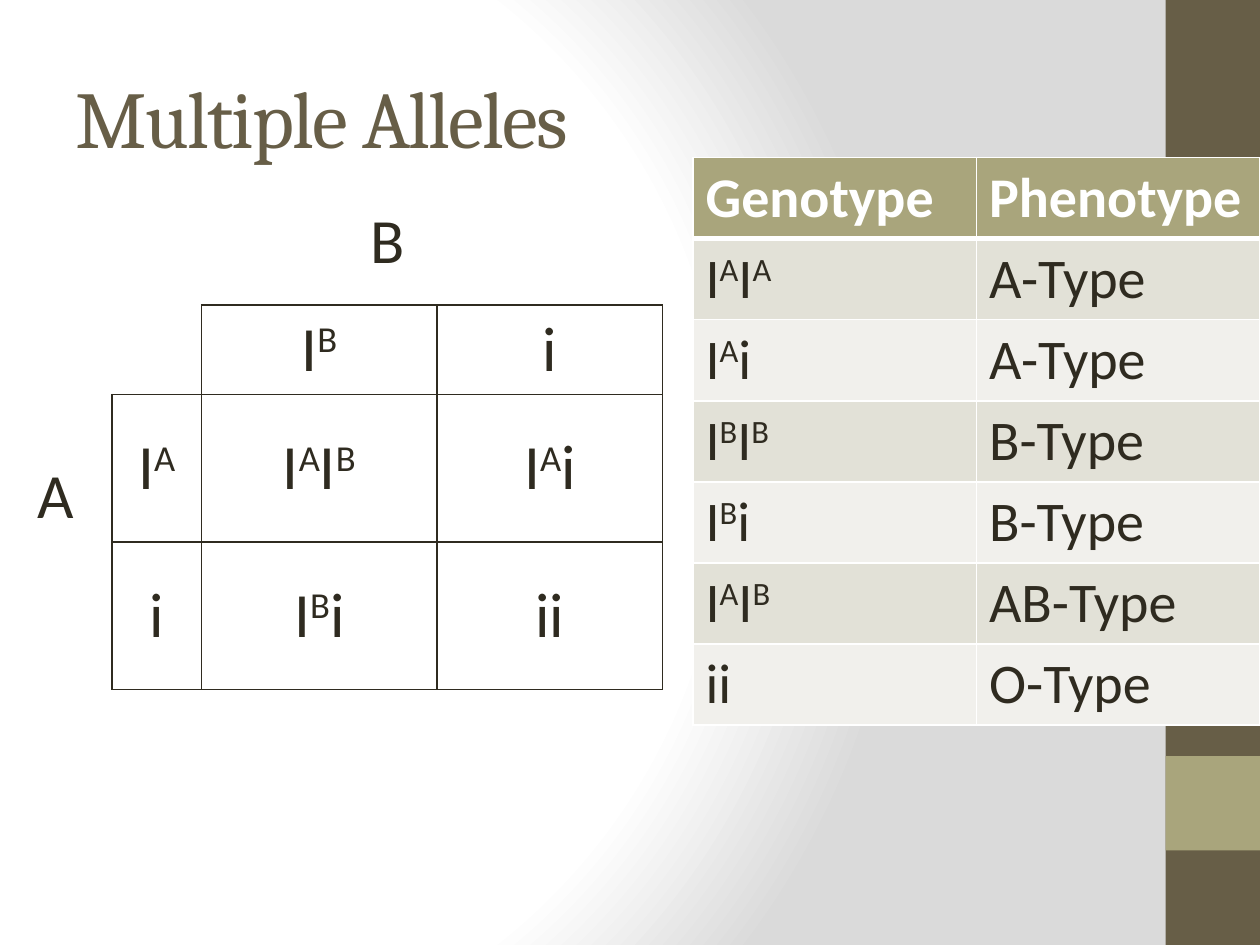
from pptx import Presentation
from pptx.dml.color import RGBColor
from pptx.enum.shapes import MSO_SHAPE
from pptx.enum.text import MSO_ANCHOR, PP_ALIGN
from pptx.oxml import parse_xml
from pptx.oxml.ns import nsdecls, qn
from pptx.util import Inches, Pt

BROWN = RGBColor(0x67, 0x5E, 0x47)
OLIVE = RGBColor(0xA9, 0xA5, 0x7C)
INK = RGBColor(0x2F, 0x2B, 0x20)
WHITE = RGBColor(0xFF, 0xFF, 0xFF)
GREY = RGBColor(0xDA, 0xDA, 0xDA)
BANDS = (RGBColor(0xE2, 0xE1, 0xD7), RGBColor(0xF1, 0xF0, 0xEC))
PLAIN_TABLE_STYLE = "{2D5ABB26-0587-4C30-8999-92F81FD0307C}"

# A caret raises the letter that follows it
CROSS = [
    ["", "B", "", ""],
    ["A", "", "I^B", "i"],
    ["", "I^A", "I^AI^B", "I^Ai"],
    ["", "i", "I^Bi", "ii"],
]
BLOOD_TYPES = [
    ("Genotype", "Phenotype"),
    ("I^AI^A", "A-Type"),
    ("I^Ai", "A-Type"),
    ("I^BI^B", "B-Type"),
    ("I^Bi", "B-Type"),
    ("I^AI^B", "AB-Type"),
    ("ii", "O-Type"),
]


def set_background(slide):
    stops = "".join(
        f'<a:gs pos="{pos * 1000}"><a:srgbClr val="{color}"/></a:gs>'
        for pos, color in ((0, WHITE), (75, WHITE), (100, GREY))
    )
    slide.element.cSld.insert(0, parse_xml(
        f'<p:bg {nsdecls("p", "a")}><p:bgPr><a:gradFill rotWithShape="1">'
        f'<a:gsLst>{stops}</a:gsLst><a:path path="circle">'
        '<a:fillToRect l="20000" t="50000" r="100000" b="50000"/></a:path>'
        '</a:gradFill><a:effectLst/></p:bgPr></p:bg>'))


def add_band(slide, top, height, color):
    band = slide.shapes.add_shape(
        MSO_SHAPE.RECTANGLE, Inches(9.25), Inches(top), Inches(0.75), Inches(height))
    band.shadow.inherit = False
    band.fill.solid()
    band.fill.fore_color.rgb = color
    band.line.fill.background()


def set_title(slide, text):
    title = slide.shapes.title
    place = {"left": 0.5, "top": 0.3, "width": 8.33, "height": 1.25}
    for name, value in place.items():
        setattr(title, name, Inches(value))
    title.text_frame.vertical_anchor = MSO_ANCHOR.MIDDLE
    paragraph = title.text_frame.paragraphs[0]
    paragraph.alignment = PP_ALIGN.LEFT
    run = paragraph.add_run()
    run.text = text
    format_font(run.font, BROWN, 46, name="Cambria")
    run.font._element.set("spc", "-100")


def format_font(font, color, size, name="Calibri", bold=False):
    for attribute, value in {"size": Pt(size), "name": name, "bold": bold}.items():
        setattr(font, attribute, value)
    font.color.rgb = color


def add_plain_table(slide, left, top, columns, rows):
    frame = slide.shapes.add_table(
        len(rows), len(columns), Inches(left), Inches(top),
        Inches(sum(columns)), Inches(sum(rows)))
    table = frame.table
    table._tbl.tblPr.find(qn("a:tableStyleId")).text = PLAIN_TABLE_STYLE
    for column, width in zip(table.columns, columns):
        column.width = Inches(width)
    for row, height in zip(table.rows, rows):
        row.height = Inches(height)
    return table


def write_allele(cell, text, color, size, align, bold=False):
    paragraph = cell.text_frame.paragraphs[0]
    paragraph.alignment = align
    base, *raised = text.split("^")
    pieces = [(base, False)]
    for part in raised:
        pieces += [(part[0], True), (part[1:], False)]
    for piece, is_raised in pieces:
        if piece:
            run = paragraph.add_run()
            run.text = piece
            format_font(run.font, color, size, bold=bold)
            if is_raised:
                run.font._element.set("baseline", "30000")


def set_borders(cell, color, sides="LRTB", bottom=1):
    properties = cell._tc.get_or_add_tcPr()
    for side in sides:
        width = Pt(bottom if side == "B" else 1)
        properties.append(parse_xml(
            f'<a:ln{side} {nsdecls("a")} w="{width}"><a:solidFill>'
            f'<a:srgbClr val="{color}"/></a:solidFill></a:ln{side}>'))


def add_punnett_square(slide):
    table = add_plain_table(
        slide, 0, 1.42, (0.89, 0.71, 1.87, 1.79), (1, 0.7, 1.17, 1.17))
    # Parent labels span the square's sides
    table.cell(0, 1).merge(table.cell(0, 3))
    table.cell(1, 0).merge(table.cell(3, 0))
    for r, row in enumerate(CROSS):
        for c, text in enumerate(row):
            cell = table.cell(r, c)
            cell.vertical_anchor = MSO_ANCHOR.MIDDLE
            if text:
                write_allele(cell, text, INK, 36, PP_ALIGN.CENTER)
            if r and c:
                set_borders(cell, INK, "RB" if r == c == 1 else "LRTB")


def add_blood_type_table(slide):
    table = add_plain_table(slide, 5.5, 1.25, [2.25] * 2, [0.57] + [0.63] * 6)
    for r, row in enumerate(BLOOD_TYPES):
        header = r == 0
        for c, text in enumerate(row):
            cell = table.cell(r, c)
            write_allele(cell, text, WHITE if header else INK, 32,
                         PP_ALIGN.LEFT, bold=header)
            set_borders(cell, WHITE, bottom=3 if header else 1)
            cell.fill.solid()
            cell.fill.fore_color.rgb = OLIVE if header else BANDS[(r - 1) % 2]


def main():
    deck = Presentation()
    deck.slide_width, deck.slide_height = Inches(10), Inches(7.5)
    slide = deck.slides.add_slide(deck.slide_layouts[5])
    # Backdrop
    set_background(slide)
    add_band(slide, 0, 7.5, BROWN)
    add_band(slide, 6, 0.75, OLIVE)
    # Content
    set_title(slide, "Multiple Alleles")
    add_punnett_square(slide)
    add_blood_type_table(slide)
    deck.save("out.pptx")


if __name__ == "__main__":
    main()
